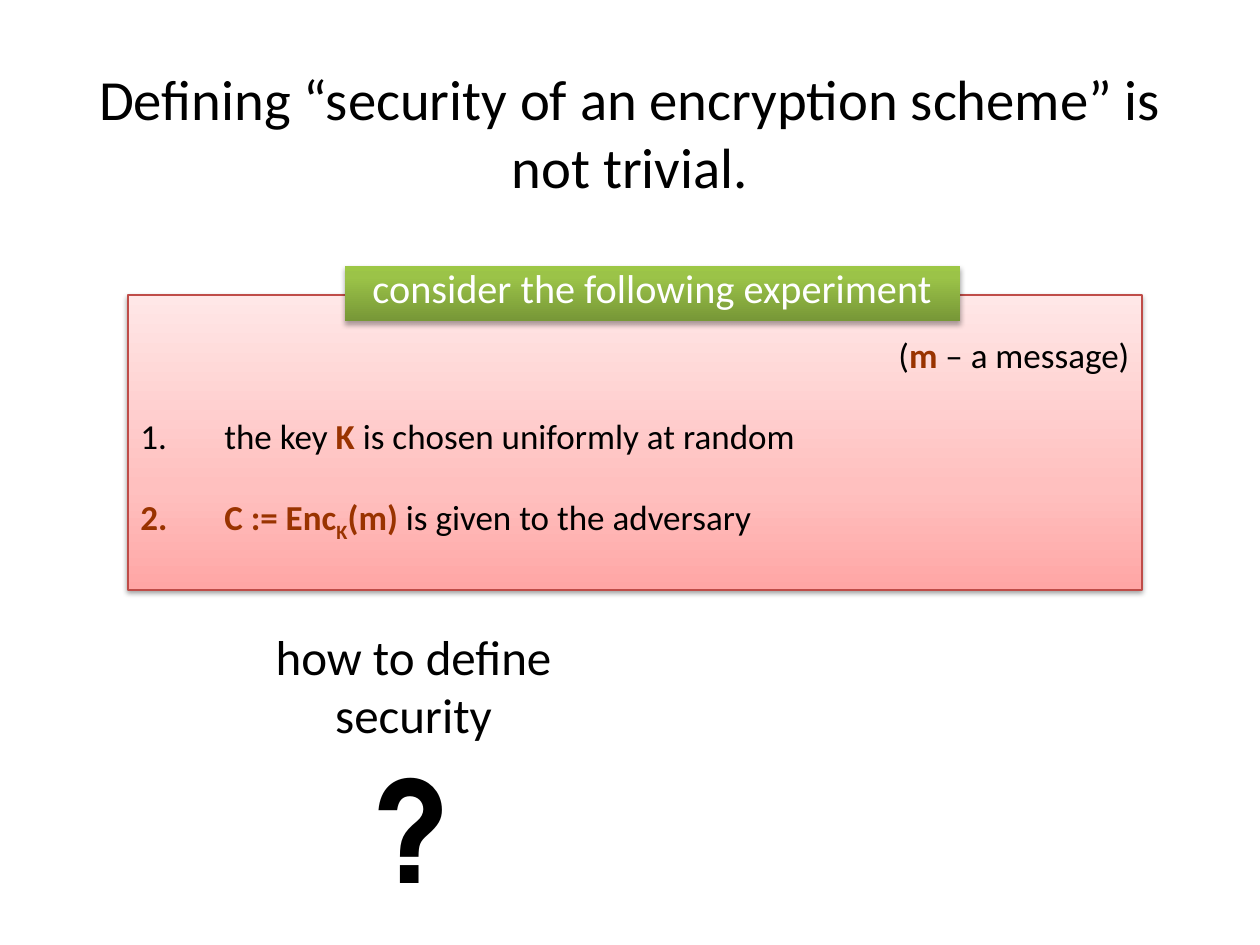
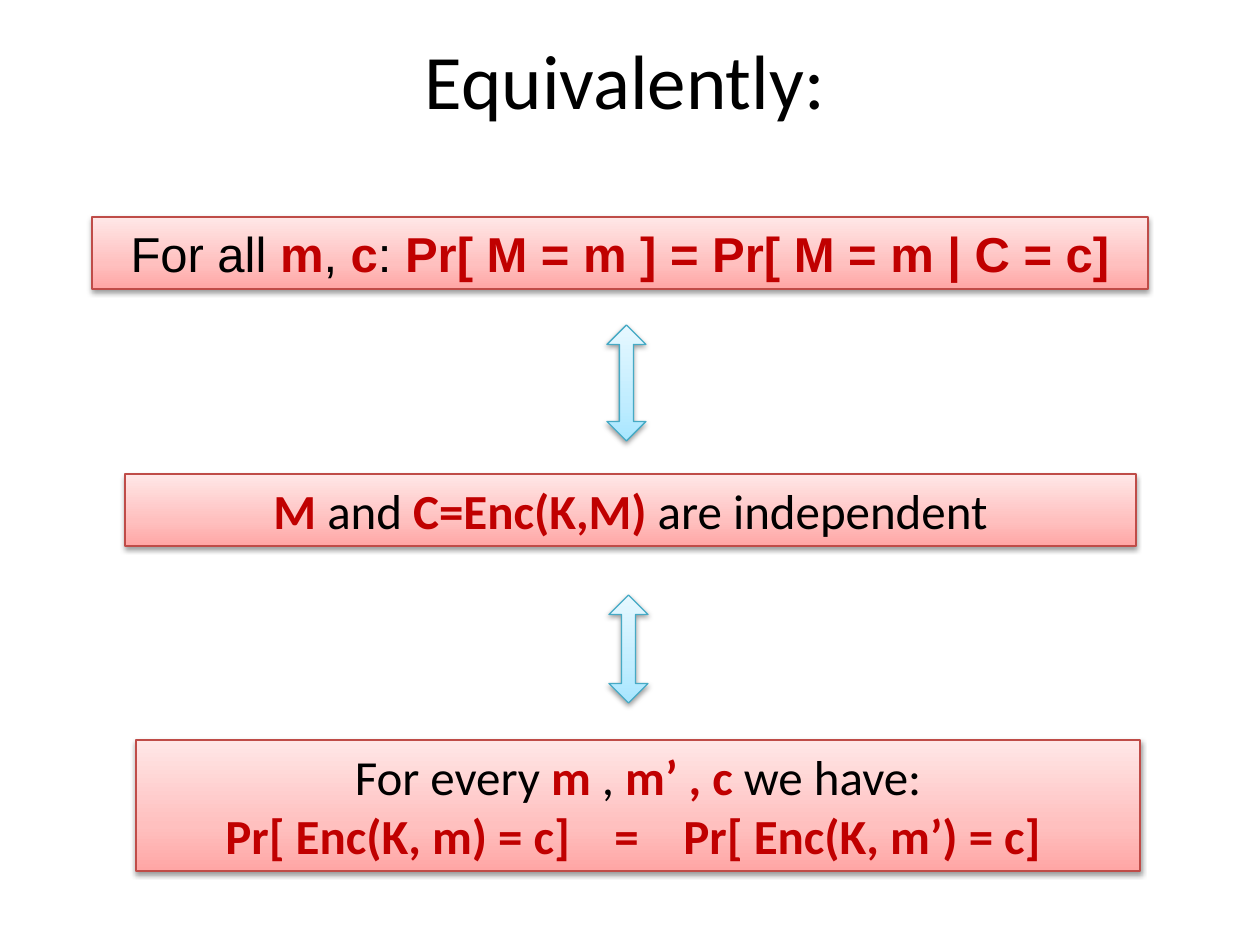
from lxml import etree
from pptx import Presentation
from pptx import util as u
from pptx.dml.color import RGBColor
from pptx.enum import shapes, text
from pptx.oxml.ns import qn

PX = 914400 / 126  # EMU in one px
BLACK = RGBColor(0x00, 0x00, 0x00)
WHITE = RGBColor(0xFF, 0xFF, 0xFF)
BROWN = RGBColor(0x99, 0x33, 0x00)
CRIMSON = RGBColor(0xC0, 0x00, 0x00)
PINK_EDGE = RGBColor(0xBF, 0x4C, 0x48)
BLUE_EDGE = RGBColor(0x46, 0xAA, 0xC5)
# Gradients run from bottom to top: (percent, colour)
PINK = [(0, RGBColor(0xFF, 0xA6, 0xA5)), (35, RGBColor(0xFF, 0xC0, 0xBF)), (100, RGBColor(0xFF, 0xE7, 0xE7))]
BLUE = [(0, RGBColor(0xA7, 0xE6, 0xFF)), (35, RGBColor(0xC1, 0xED, 0xFF)), (100, RGBColor(0xE7, 0xF8, 0xFF))]
GREEN = [(0, RGBColor(0x77, 0x97, 0x37)), (80, RGBColor(0x9B, 0xC3, 0x48)), (100, RGBColor(0x9D, 0xC7, 0x46))]
CENTER, LEFT, RIGHT = text.PP_ALIGN.CENTER, text.PP_ALIGN.LEFT, text.PP_ALIGN.RIGHT
RECT, ARROW = shapes.MSO_SHAPE.RECTANGLE, shapes.MSO_SHAPE.UP_DOWN_ARROW


def write(frame, line, size=28, font="Calibri", color=BLACK, accent=CRIMSON, align=CENTER,
          bold=False, spacing=None, before=None):
    """Add a paragraph; *...* is bold in the accent colour, _..._ is subscript."""
    frame.word_wrap = True
    para = frame.add_paragraph() if frame.text else frame.paragraphs[0]
    para.alignment = align
    para.line_spacing = spacing
    para.space_before = before
    for i, part in enumerate(line.split("*")):
        for j, piece in enumerate(part.split("_")):
            if not piece:
                continue
            run = para.add_run()
            run.text = piece
            run.font.size = u.Pt(size)
            run.font.name = font
            run.font.bold = bold or i % 2 == 1
            run.font.color.rgb = accent if i % 2 else color
            if j % 2:
                run.font._element.set("baseline", "-25000")
    return para


def panel(slide, box, stops, edge=None, kind=RECT, opacity=38, distance=1.6):
    """Add a shape with a gradient fill and a soft shadow below it."""
    shape = slide.shapes.add_shape(kind, *(round(n * PX) for n in box))
    shape.text_frame.vertical_anchor = text.MSO_ANCHOR.TOP
    shape.fill.gradient()
    shape.fill.gradient_angle = 90
    props = shape._element.spPr
    stop_list = props.find(".//" + qn("a:gsLst"))
    for old in list(stop_list):
        stop_list.remove(old)
    for percent, color in stops:
        stop = etree.SubElement(stop_list, qn("a:gs"), pos=str(percent * 1000))
        etree.SubElement(stop, qn("a:srgbClr"), val=str(color))
    if edge is None:
        shape.line.fill.background()
    else:
        shape.line.color.rgb = edge
        shape.line.width = u.Pt(0.75)
    shape.shadow.inherit = False
    shadow = etree.SubElement(props.find(qn("a:effectLst")), qn("a:outerShdw"), blurRad=str(u.Pt(3.1)),
                              dist=str(u.Pt(distance)), dir="5400000", rotWithShape="0")
    tint = etree.SubElement(shadow, qn("a:srgbClr"), val="000000")
    etree.SubElement(tint, qn("a:alpha"), val=str(opacity * 1000))
    return shape


deck = Presentation()
deck.slide_width, deck.slide_height = round(1260 * PX), round(945 * PX)

# Both slides with their titles
pages = []
for title, size, box in [
    ("Defining “security of an encryption scheme” is not trivial.", 32.4, (42, 53, 1176, 158)),
    ("Equivalently:", 44, (39, 0, 1172, 158)),
]:
    page = deck.slides.add_slide(deck.slide_layouts[6])
    heading = page.shapes.add_textbox(*(round(n * PX) for n in box)).text_frame
    heading.vertical_anchor = text.MSO_ANCHOR.MIDDLE
    write(heading, title, size)
    pages.append(page)
defining, equivalently = pages

# Slide 1: the experiment
experiment = panel(defining, (128, 295, 1014, 295), PINK, PINK_EDGE).text_frame
experiment.margin_top = round(47 * PX)
write(experiment, "(*m* – a message)", 20, accent=BROWN, align=RIGHT, spacing=0.8)
for step, gap in [("the key *K *is chosen uniformly at random", 27),
                  ("*C := Enc_K_(m) *is given to the adversary", 25)]:
    para = write(experiment, step, 20, accent=BROWN, align=LEFT, spacing=0.8, before=u.Pt(gap))
    numbering = para._p.get_or_add_pPr()
    numbering.set("marL", str(round(84 * PX)))
    numbering.set("indent", str(round(-84 * PX)))
    etree.SubElement(numbering, qn("a:buFont"), typeface="+mj-lt")
    etree.SubElement(numbering, qn("a:buAutoNum"), type="arabicPeriod")

label = panel(defining, (345, 266, 615, 55), GREEN, opacity=35, distance=1.8)
write(label.text_frame, "consider the following experiment", 23, color=WHITE, spacing=0.8)

# Slide 1: the question
question = defining.shapes.add_textbox(*(round(n * PX) for n in (256, 620, 315, 301))).text_frame
write(question, "how to define security")
write(question, "?", 80, "TeX Gyre Adventor", bold=True)

# Slide 2: three equivalent conditions
for box, font, condition in [
    ((92, 217, 1056, 72), "Arial", "For all *m*, *c*: *Pr[ M = m ] = Pr[ M = m | C = c]*"),
    ((125, 474, 1011, 72), "Calibri", "*M* and *C=Enc(K,M)* are independent"),
    ((136, 740, 1004, 131), "Calibri", "For every *m *, *m’ , c *we have:"),
]:
    statement = panel(equivalently, box, PINK, PINK_EDGE).text_frame
    write(statement, condition, font=font)

# The equation under the last condition is set on tab stops
equation = write(statement, "*\tPr[ Enc(K, m) = c]\t=\tPr[ Enc(K, m’) = c]*", align=LEFT)
tabs = etree.SubElement(equation._p.get_or_add_pPr(), qn("a:tabLst"))
for stop in (77, 466, 535):
    etree.SubElement(tabs, qn("a:tab"), pos=str(round(stop * PX)), algn="l")

# Slide 2: arrows between the conditions
for box in [(607, 325, 39, 116), (609, 595, 39, 108)]:
    arrow = panel(equivalently, box, BLUE, BLUE_EDGE, ARROW)
    arrow.adjustments[0] = arrow.adjustments[1] = 0.36

deck.save("out.pptx")
